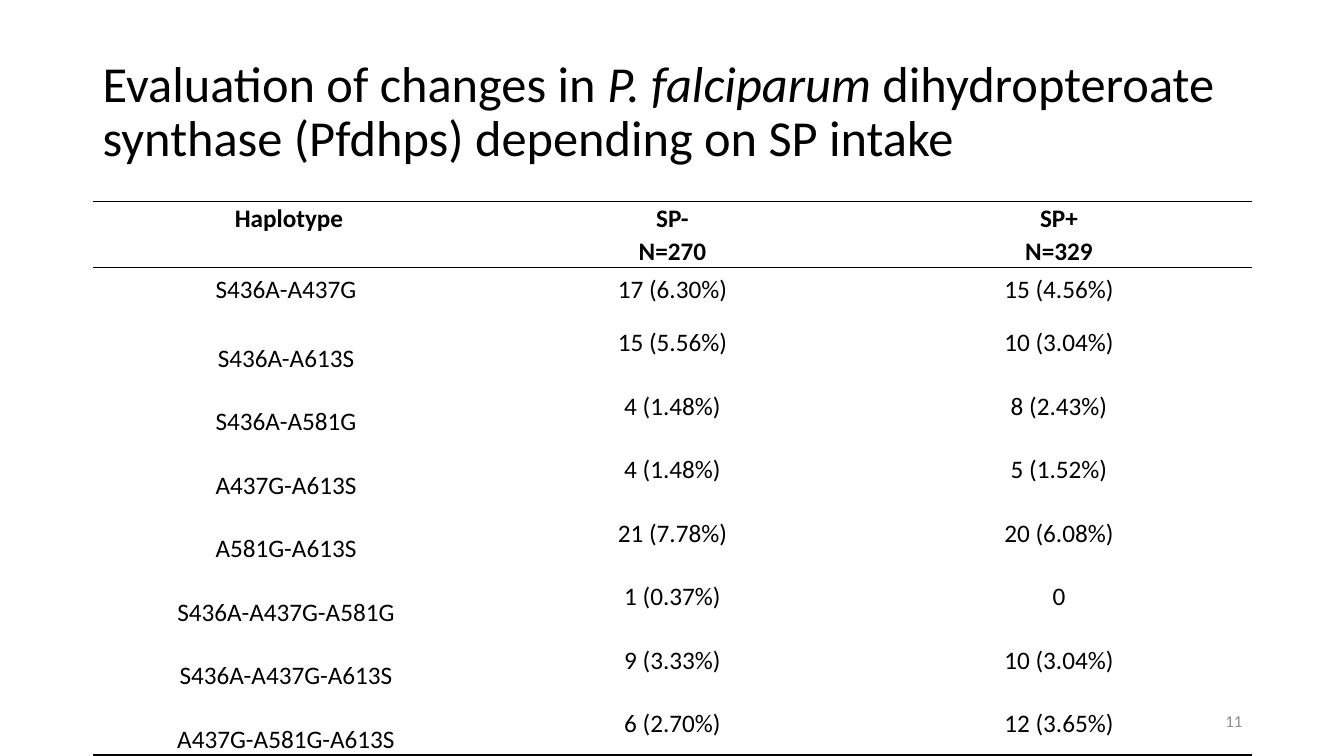
"""Build the slide comparing Pfdhps haplotypes by SP intake."""
import pptx
import pptx.dml.color
import pptx.enum.text
import pptx.oxml
import pptx.oxml.ns
import pptx.util

Inches, Pt = pptx.util.Inches, pptx.util.Pt
RGBColor = pptx.dml.color.RGBColor
ALIGN = pptx.enum.text.PP_ALIGN
ANCHOR = pptx.enum.text.MSO_ANCHOR

BLACK = RGBColor(0x00, 0x00, 0x00)
GRAY = RGBColor(0x8C, 0x8C, 0x8C)
FONT = "Calibri"
PLAIN_STYLE = "{2D5ABB26-0587-4C30-8999-92F81FD0307C}"

TITLE = [
    ("Evaluation of changes in ", False),
    ("P. falciparum ", True),
    ("dihydropteroate synthase (Pfdhps) depending on SP intake", False),
]
PAGE_NUMBER = "11"
HEADINGS = ("Haplotype", "SP-\nN=270", "SP+\nN=329")
HAPLOTYPES = [
    ("S436A-A437G", "17 (6.30%)", "15 (4.56%)"),
    ("S436A-A613S", "15 (5.56%)", "10 (3.04%)"),
    ("S436A-A581G", "4 (1.48%)", "8 (2.43%)"),
    ("A437G-A613S", "4 (1.48%)", "5 (1.52%)"),
    ("A581G-A613S", "21 (7.78%)", "20 (6.08%)"),
    ("S436A-A437G-A581G", "1 (0.37%)", "0"),
    ("S436A-A437G-A613S", "9 (3.33%)", "10 (3.04%)"),
    ("A437G-A581G-A613S", "6 (2.70%)", "12 (3.65%)"),
]

LEFT, WIDTH = 0.92, 11.5
TABLE_TOP = 2
HEADING_HEIGHT, FIRST_HEIGHT, ROW_HEIGHT = 0.65, 0.43, 0.63
NAME_DROP = 0.3


def set_all(target, values):
    for name, value in values.items():
        setattr(target, name, value)


def write(paragraph, text, size, color, bold=False, italic=False):
    run = paragraph.add_run()
    run.text = text
    set_all(run.font, {"name": FONT, "size": Pt(size), "bold": bold, "italic": italic})
    run.font.color.rgb = color


def add_text_box(slide, left, top, width, height):
    frame = slide.shapes.add_textbox(*map(Inches, (left, top, width, height))).text_frame
    set_all(frame, {"word_wrap": True, "vertical_anchor": ANCHOR.MIDDLE})
    return frame.paragraphs[0]


def add_rule(cell, side):
    cell._tc.get_or_add_tcPr().append(pptx.oxml.parse_xml(
        f'<a:{side} {pptx.oxml.ns.nsdecls("a")} w="{Pt(1)}"><a:solidFill>'
        f'<a:srgbClr val="{BLACK}"/></a:solidFill></a:{side}>'))


def fill_cell(cell, text, row, column):
    heading = row == 0
    dropped_name = row > 1 and column == 0
    side = 0.05 if column == 0 and not heading else 0.03
    set_all(cell, {
        "margin_left": Inches(0.09 if heading and column == 0 else side),
        "margin_right": Inches(side),
        "margin_top": Inches(NAME_DROP if dropped_name else 0),
        "margin_bottom": 0,
        "vertical_anchor": ANCHOR.TOP if heading else ANCHOR.MIDDLE,
    })
    for index, line in enumerate(text.split("\n")):
        frame = cell.text_frame
        paragraph = frame.add_paragraph() if index else frame.paragraphs[0]
        set_all(paragraph, {"alignment": ALIGN.CENTER, "line_spacing": 1.07})
        write(paragraph, line, 18, BLACK, bold=heading)
    if heading:
        add_rule(cell, "lnT")
    if row in (0, len(HAPLOTYPES)):
        add_rule(cell, "lnB")
    cell.fill.background()


def add_haplotype_table(slide):
    rows = [HEADINGS, *HAPLOTYPES]
    heights = [HEADING_HEIGHT, FIRST_HEIGHT] + [ROW_HEIGHT] * (len(rows) - 2)
    table = slide.shapes.add_table(
        len(rows), len(HEADINGS),
        *map(Inches, (LEFT, TABLE_TOP, WIDTH, sum(heights)))).table
    set_all(table, {"first_row": False, "horz_banding": False})
    table._tbl.tblPr.find(pptx.oxml.ns.qn("a:tableStyleId")).text = PLAIN_STYLE
    for row, (height, texts) in enumerate(zip(heights, rows)):
        table.rows[row].height = Inches(height)
        for column, text in enumerate(texts):
            fill_cell(table.cell(row, column), text, row, column)


def main():
    deck = pptx.Presentation()
    set_all(deck, {"slide_width": Inches(13.33), "slide_height": Inches(7.5)})
    slide = deck.slides.add_slide(deck.slide_layouts[6])

    title = add_text_box(slide, LEFT, 0.4, WIDTH, 1.45)
    title.line_spacing = 0.9
    for text, italic in TITLE:
        write(title, text, 36, BLACK, italic=italic)

    add_haplotype_table(slide)

    page = add_text_box(slide, 9.42, 6.95, 3, 0.4)
    page.alignment = ALIGN.RIGHT
    write(page, PAGE_NUMBER, 12, GRAY)
    deck.save("out.pptx")


if __name__ == "__main__":
    main()
